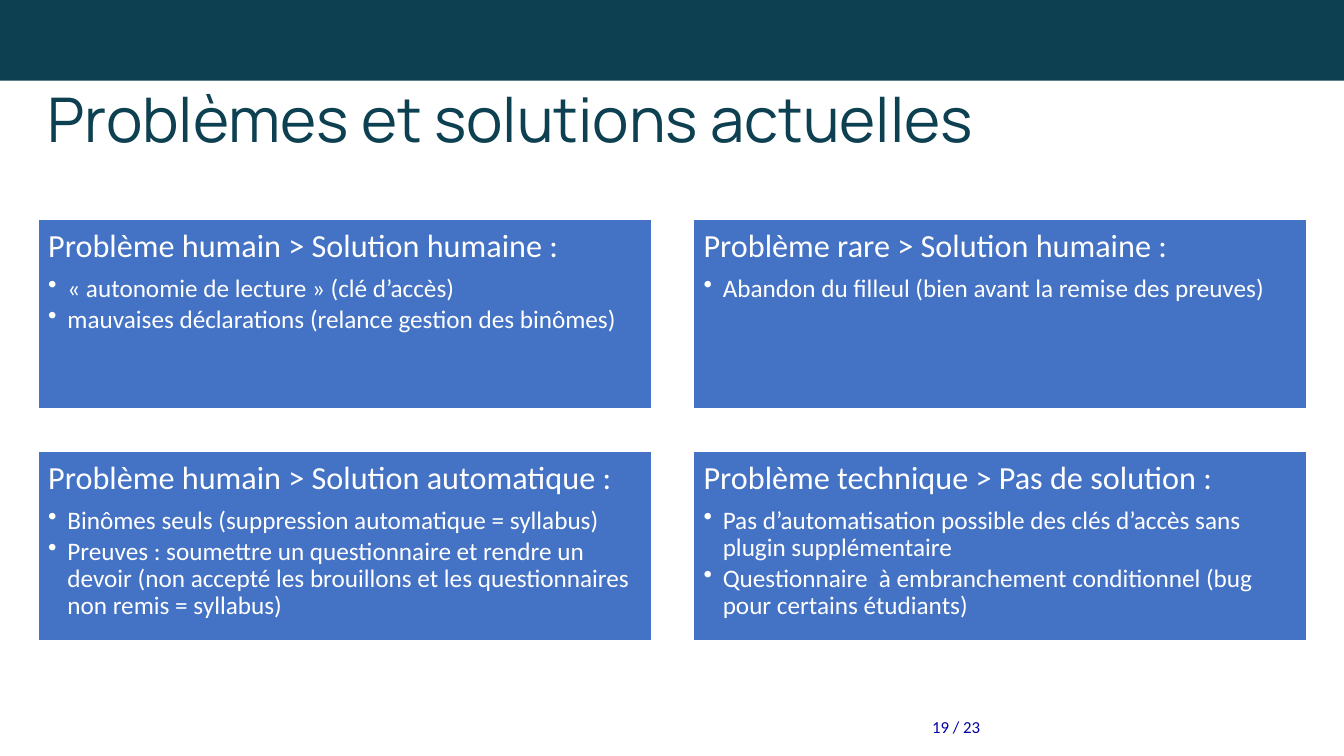
from dataclasses import dataclass

from lxml.etree import SubElement
from pptx import Presentation
from pptx.dml.color import RGBColor
from pptx.enum.shapes import MSO_SHAPE
from pptx.enum.text import MSO_ANCHOR, PP_ALIGN
from pptx.oxml.ns import qn
from pptx.shapes.autoshape import Shape
from pptx.slide import Slide
from pptx.text.text import _Paragraph
from pptx.util import Inches, Pt

PETROL = RGBColor(0x0D, 0x40, 0x50)
BLUE = RGBColor(0x44, 0x72, 0xC4)
NAVY = RGBColor(0x00, 0x00, 0xA6)
WHITE = RGBColor(0xFF, 0xFF, 0xFF)

CARD_W, CARD_H = 6.08, 1.88
CARD_LEFT, CARD_TOP = 0.38, 2.18
STEP_X, STEP_Y = 6.5, 2.3
COLUMNS = 2
BULLET_INDENT = 0.19


@dataclass(frozen=True)
class Card:
    heading: str
    points: tuple[str, ...]


CARDS = (
    Card("Problème humain > Solution humaine :", (
        "« autonomie de lecture » (clé d’accès)",
        "mauvaises déclarations (relance gestion des binômes)",
    )),
    Card("Problème rare > Solution humaine :", (
        "Abandon du filleul (bien avant la remise des preuves)",
    )),
    Card("Problème humain > Solution automatique :", (
        "Binômes seuls (suppression automatique = syllabus)",
        "Preuves : soumettre un questionnaire et rendre un devoir "
        "(non accepté les brouillons et les questionnaires non remis = syllabus)",
    )),
    Card("Problème technique > Pas de solution :", (
        "Pas d’automatisation possible des clés d’accès sans plugin supplémentaire",
        "Questionnaire  à embranchement conditionnel (bug pour certains étudiants)",
    )),
)


def add_rect(s: Slide, x: float, y: float, w: float, h: float, fill: RGBColor) -> Shape:
    sp = s.shapes.add_shape(MSO_SHAPE.RECTANGLE, Inches(x), Inches(y), Inches(w), Inches(h))
    sp.shadow.inherit = False
    sp.fill.solid()
    sp.fill.fore_color.rgb = fill
    sp.line.fill.background()
    return sp


def format_text(p: _Paragraph, font: str, size: float, color: RGBColor) -> None:
    for r in p.runs:
        r.font.name = font
        r.font.size = Pt(size)
        r.font.color.rgb = color


def add_label(s: Slide, x: float, y: float, w: float, h: float, text: str,
              font: str, size: float, color: RGBColor) -> _Paragraph:
    """Add a one-line, vertically centred text box and return its paragraph."""
    tf = s.shapes.add_textbox(Inches(x), Inches(y), Inches(w), Inches(h)).text_frame
    tf.word_wrap = True
    tf.vertical_anchor = MSO_ANCHOR.MIDDLE
    tf.text = text
    p = tf.paragraphs[0]
    format_text(p, font, size, color)
    return p


def make_bullet(p: _Paragraph) -> None:
    p.level = 1
    pPr = p._p.get_or_add_pPr()
    pPr.set("marL", str(Inches(BULLET_INDENT)))
    pPr.set("indent", str(-Inches(BULLET_INDENT)))
    SubElement(pPr, qn("a:buChar")).set("char", "•")


def add_card(s: Slide, card: Card, x: float, y: float) -> None:
    sp = add_rect(s, x, y, CARD_W, CARD_H, BLUE)
    sp.line.color.rgb = WHITE
    sp.line.width = Pt(1)
    tf = sp.text_frame
    tf.word_wrap = True
    tf.vertical_anchor = MSO_ANCHOR.TOP
    tf.margin_left = tf.margin_right = tf.margin_top = tf.margin_bottom = Inches(0.1)
    tf.text = "\n".join((card.heading, *card.points))
    for i, p in enumerate(tf.paragraphs):
        size, after = (18, 2.7) if i else (23, 8)
        if i:
            make_bullet(p)
        p.alignment = PP_ALIGN.LEFT
        p.line_spacing = 0.9
        p.space_after = Pt(after)
        format_text(p, "Calibri", size, WHITE)


def main() -> None:
    prs = Presentation()
    prs.slide_width, prs.slide_height = Inches(13.33), Inches(7.5)
    s = prs.slides.add_slide(prs.slide_layouts[6])

    add_rect(s, 0, 0, 13.33, 0.8, PETROL)
    title = add_label(s, 0.37, 0.8, 12.59, 0.83, "Problèmes et solutions actuelles",
                      "Manrope", 44, PETROL)
    title.line_spacing = 0.9

    for i, card in enumerate(CARDS):
        row, col = divmod(i, COLUMNS)
        add_card(s, card, CARD_LEFT + col * STEP_X, CARD_TOP + row * STEP_Y)

    page = add_label(s, 6.82, 7.01, 3, 0.4, "19 / 23", "Calibri", 12, NAVY)
    page.alignment = PP_ALIGN.RIGHT

    prs.save("out.pptx")


if __name__ == "__main__":
    main()
